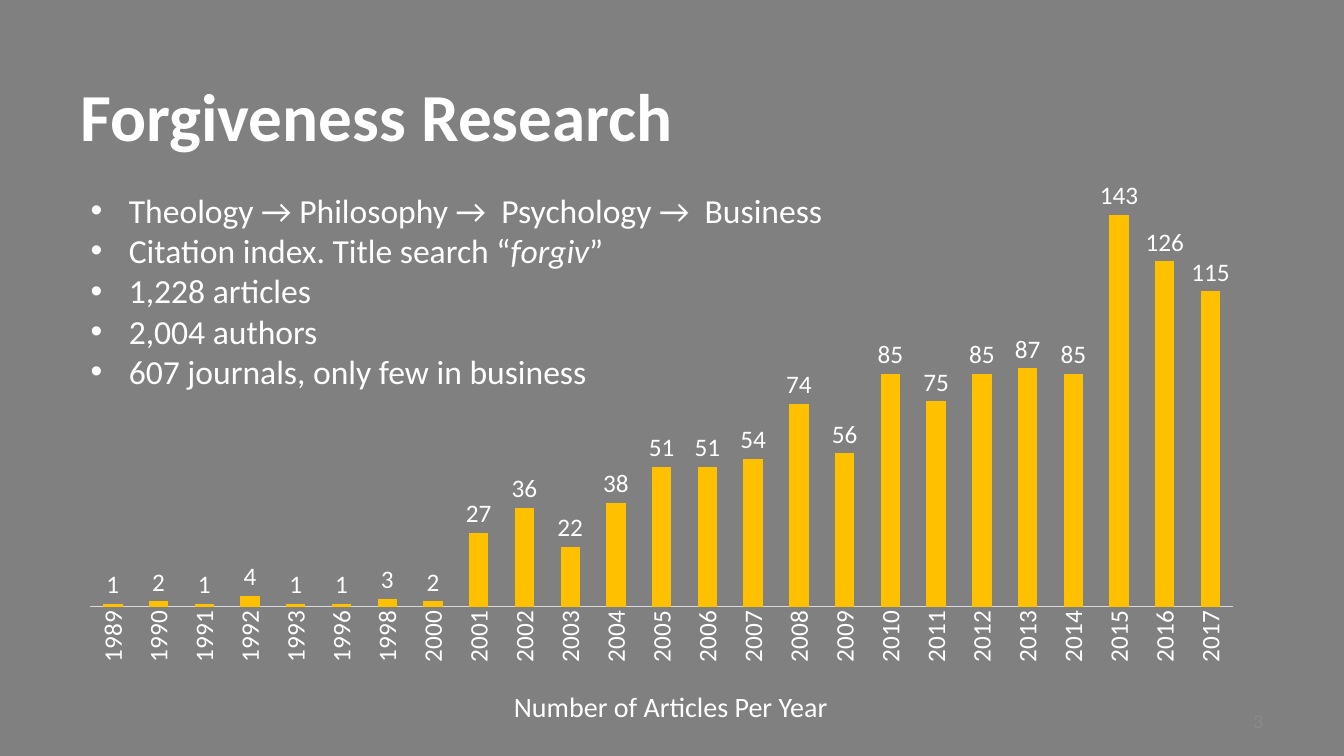
from lxml import etree
from pptx import Presentation
from pptx.chart.data import CategoryChartData
from pptx.dml.color import RGBColor
from pptx.enum.chart import XL_CHART_TYPE, XL_LABEL_POSITION, XL_TICK_LABEL_POSITION, XL_TICK_MARK
from pptx.enum.text import MSO_ANCHOR, PP_ALIGN
from pptx.oxml import parse_xml
from pptx.oxml.ns import nsdecls, qn
from pptx.util import Inches, Pt

COLUMN = XL_CHART_TYPE.COLUMN_CLUSTERED
OUTSIDE = XL_LABEL_POSITION.OUTSIDE_END
NEXT = XL_TICK_LABEL_POSITION.NEXT_TO_AXIS
NONE = XL_TICK_MARK.NONE
TOP, MIDDLE = MSO_ANCHOR.TOP, MSO_ANCHOR.MIDDLE
LEFT, CENTER = PP_ALIGN.LEFT, PP_ALIGN.CENTER

# Grid: 160 columns by 90 rows
UNIT = Inches(1 / 12)
WHITE, GREY, GOLD = "FFFFFF", "808080", "FFC000"


def paint(color, value):
    color.rgb = RGBColor.from_string(value)


def style(font, size, color=WHITE, **more):
    for key, value in {"name": "Calibri", "size": Pt(size), **more}.items():
        setattr(font, key, value)
    font.fill.solid()
    paint(font.fill.fore_color, color)


deck = Presentation()
deck.slide_width, deck.slide_height = 160 * UNIT, 90 * UNIT
slide = deck.slides.add_slide(deck.slide_layouts[6])
back = slide.background.fill
back.solid()
paint(back.fore_color, GREY)

# Articles per year
years = [1989, 1990, 1991, 1992, 1993, 1996, 1998, *range(2000, 2018)]
counts = [1, 2, 1, 4, 1, 1, 3, 2, 27, 36, 22, 38, 51, 51, 54, 74, 56,
          85, 75, 85, 87, 85, 143, 126, 115]
data = CategoryChartData()
data.categories = [str(year) for year in years]
data.add_series("Series 1", counts)
spot = [n * UNIT for n in (6, 18, 143, 65)]
chart = slide.shapes.add_chart(COLUMN, *spot, data).chart
chart.has_legend = chart.has_title = False
style(chart.font, 18)

plot = chart.plots[0]
for key, value in {"gap_width": 137, "overlap": -81,
                   "vary_by_categories": False, "has_data_labels": True}.items():
    setattr(plot, key, value)
bars = plot.series[0].format.fill
bars.solid()
paint(bars.fore_color, GOLD)
labels = plot.data_labels
labels.show_value = True
labels.position = OUTSIDE
style(labels.font, 18)

# Axes
base = chart.category_axis
for key, value in {"major_tick_mark": NONE, "minor_tick_mark": NONE,
                   "tick_label_position": NEXT}.items():
    setattr(base, key, value)
style(base.tick_labels.font, 18)
base.format.line.width = Pt(0.75)
paint(base.format.line.color, "D9D9D9")
turn = base.tick_labels.font._element.getparent().getparent().getparent()
turn.find(qn("a:bodyPr")).set("rot", "-5400000")
scale = chart.value_axis
for key, value in {"minimum_scale": 0, "maximum_scale": 160,
                   "has_major_gridlines": False, "visible": False}.items():
    setattr(scale, key, value)

# Inner plot area, as shares of the chart
area = chart._chartSpace.chart.plotArea
for old in area.findall(qn("c:layout")):
    area.remove(old)
layout = parse_xml(f"<c:layout {nsdecls('c')}><c:manualLayout/></c:layout>")
for tag, value in {"layoutTarget": "inner", "xMode": "edge", "yMode": "edge",
                   "x": 0.033, "y": 0.031, "w": 0.952, "h": 0.804}.items():
    etree.SubElement(layout[0], qn(f"c:{tag}")).set("val", str(value))
area.insert(0, layout)

# Texts: grid box, side inset, anchor, alignment, size, color, bold, bullet, lines
bullets = [
    ["Theology → Philosophy →  Psychology →  Business"],
    ["Citation index. Title search “", "forgiv", "”"],
    ["1,228 articles"],
    ["2,004 authors"],
    ["607 journals, only few in business"],
]
texts = [
    ((8, 9, 144, 9.4), 0.13, MIDDLE, LEFT, 48, WHITE, True, False,
     [["Forgiveness Research"]]),
    ((60, 81.5, 48.6, 5.3), 0.1, TOP, LEFT, 20, WHITE, False, False,
     [["Number of Articles Per Year"]]),
    ((9.6, 22, 104.4, 25.4), 0.1, TOP, LEFT, 24, WHITE, False, True, bullets),
    ((148, 83.3, 3.6, 5), 0, MIDDLE, CENTER, 14, "8B8B8B", False, False, [["3"]]),
]
for box, inset, anchor, align, size, color, bold, dots, lines in texts:
    frame = slide.shapes.add_textbox(*(int(n * UNIT) for n in box)).text_frame
    for key, value in {"word_wrap": True, "vertical_anchor": anchor,
                       "margin_left": Inches(inset),
                       "margin_right": Inches(inset)}.items():
        setattr(frame, key, value)
    for row, line in enumerate(lines):
        para = frame.add_paragraph() if row else frame.paragraphs[0]
        para.alignment = align
        if dots:
            props = para._p.get_or_add_pPr()
            props.set("marL", str(Inches(0.38)))
            props.set("indent", str(-Inches(0.38)))
            etree.SubElement(props, qn("a:buFont")).set("typeface", "Arial")
            etree.SubElement(props, qn("a:buChar")).set("char", "•")
        for part in line:
            run = para.add_run()
            run.text = part
            style(run.font, size, color, bold=bold, italic=part == "forgiv")

deck.save("out.pptx")
